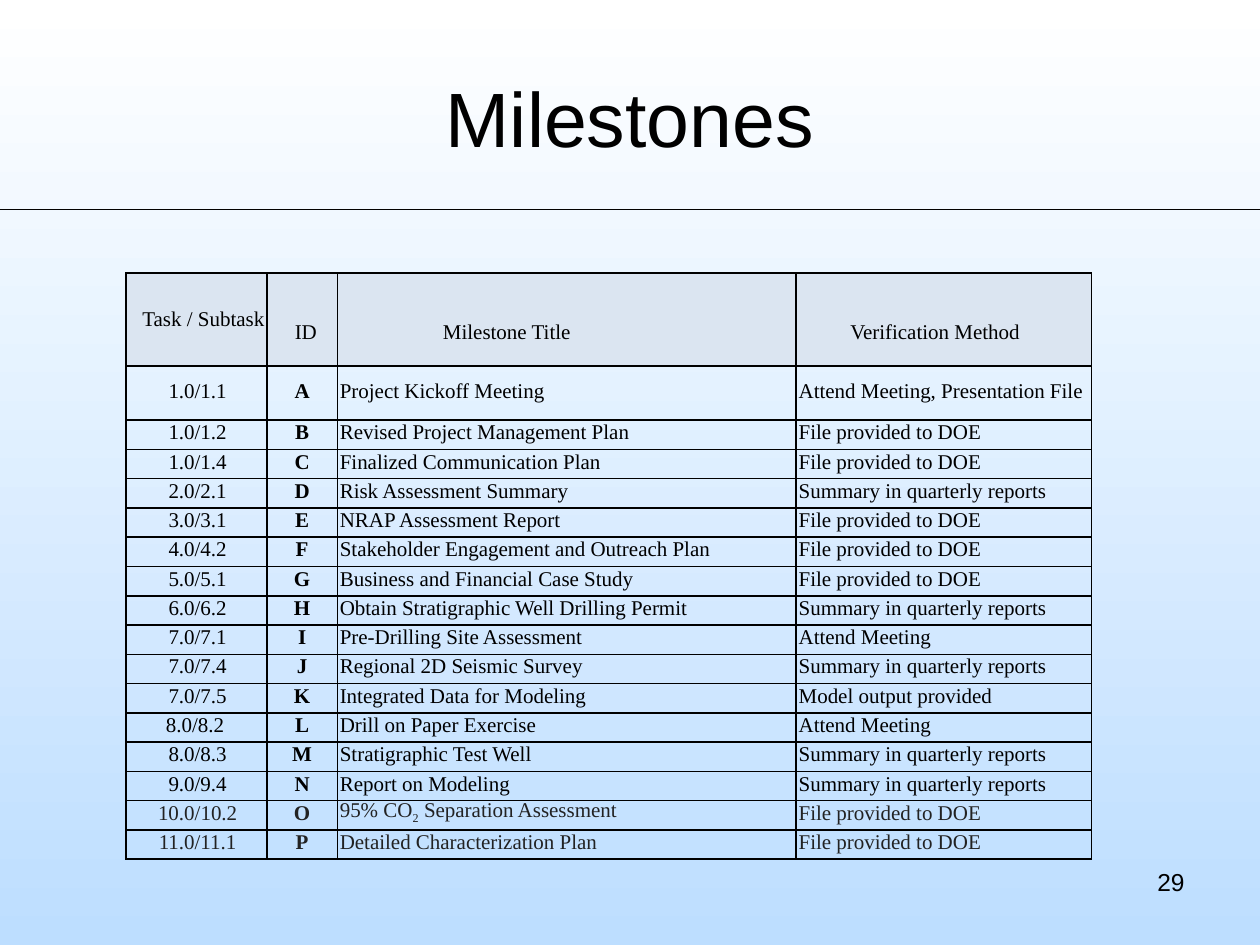
from dataclasses import dataclass

import pptx
import pptx.dml.color
import pptx.enum.shapes
import pptx.enum.text
import pptx.oxml
import pptx.oxml.ns
import pptx.util

Cm = pptx.util.Cm
Pt = pptx.util.Pt
Align = pptx.enum.text.PP_ALIGN
Anchor = pptx.enum.text.MSO_ANCHOR


@dataclass(frozen=True)
class Theme:
    sans: str = "Arial"
    serif: str = "Times New Roman"
    title_size: int = 44
    number_size: int = 14
    table_size: int = 12
    ink: str = "000000"
    soft_ink: str = "222222"
    header_fill: str = "DBE5F1"
    sky_top: str = "FFFFFF"
    sky_bottom: str = "BDDEFF"


def rgb(value):
    return pptx.dml.color.RGBColor.from_string(value)


class SlideBuilder:
    def __init__(self, deck, theme):
        self.theme = theme
        self.page = deck.slides.add_slide(deck.slide_layouts[5])

    def background(self):
        fill = self.page.background.fill
        fill.gradient()
        fill.gradient_angle = 270
        for stop, color in zip(fill.gradient_stops, (self.theme.sky_top, self.theme.sky_bottom)):
            stop.color.rgb = rgb(color)

    def span(self, para, text, font, size, color, bold=False):
        span = para.add_run()
        span.text = text
        span.font.name = font
        span.font.size = Pt(size)
        span.font.bold = bold
        span.font.color.rgb = rgb(color)
        return span

    def title(self, text, left, top, width, height):
        box = self.page.shapes.title
        box.left, box.top, box.width, box.height = Cm(left), Cm(top), Cm(width), Cm(height)
        box.text_frame.vertical_anchor = Anchor.MIDDLE
        para = box.text_frame.paragraphs[0]
        para.alignment = Align.CENTER
        self.span(para, text, self.theme.sans, self.theme.title_size, self.theme.ink)

    def text(self, text, left, top, width, height):
        box = self.page.shapes.add_textbox(Cm(left), Cm(top), Cm(width), Cm(height))
        box.text_frame.word_wrap = True
        para = box.text_frame.paragraphs[0]
        para.alignment = Align.RIGHT
        self.span(para, text, self.theme.sans, self.theme.number_size, self.theme.ink)

    def rule(self, left, top, width):
        line = self.page.shapes.add_connector(
            pptx.enum.shapes.MSO_CONNECTOR.STRAIGHT, Cm(left), Cm(top), Cm(left + width), Cm(top))
        line.line.color.rgb = rgb(self.theme.ink)
        line.line.width = Pt(0.75)
        properties = line._element.spPr
        properties.append(properties.makeelement(pptx.oxml.ns.qn("a:effectLst"), {}))

    def table(self, rows, left, top, widths, heights):
        frame = self.page.shapes.add_table(
            len(rows), len(widths), Cm(left), Cm(top), Cm(sum(widths)), Cm(sum(heights)))
        table = frame.table
        table.first_row = False
        table.horz_banding = False
        for column, width in zip(table.columns, widths):
            column.width = Cm(width)
        for row, height in zip(table.rows, heights):
            row.height = Cm(height)
        return table

    def cell(self, cell, spans, color, left=0.0, top=0.0, align=Align.LEFT,
             bold=False, spacing=Pt(11), fill=None):
        cell.vertical_anchor = Anchor.MIDDLE
        cell.margin_left, cell.margin_top = Cm(left), Cm(top)
        cell.margin_right = cell.margin_bottom = 0
        para = cell.text_frame.paragraphs[0]
        para.alignment = align
        para.line_spacing = spacing
        for text, baseline in spans:
            span = self.span(para, text, self.theme.serif, self.theme.table_size, color, bold)
            if baseline:
                span.font._element.set("baseline", str(baseline))
        self.borders(cell)
        if fill:
            cell.fill.solid()
            cell.fill.fore_color.rgb = rgb(fill)
        else:
            cell.fill.background()

    def borders(self, cell):
        properties = cell._tc.get_or_add_tcPr()
        for side in ("lnL", "lnR", "lnT", "lnB"):
            properties.append(pptx.oxml.parse_xml(
                f'<a:{side} {pptx.oxml.ns.nsdecls("a")} w="{Pt(1)}"><a:solidFill>'
                f'<a:srgbClr val="{self.theme.ink}"/></a:solidFill></a:{side}>'))


FILE = "File provided to DOE"
SUMMARY = "Summary in quarterly reports"
MEETING = "Attend Meeting"

HEADER = [
    ("Task / Subtask", dict(left=0.33, spacing=1.02)),
    ("ID", dict(left=0.15, top=0.5, align=Align.CENTER, spacing=1.07)),
    ("Milestone Title", dict(left=2.13, top=0.5, spacing=1.07)),
    ("Verification Method", dict(left=1.09, top=0.5, spacing=1.07)),
]
COLUMN_STYLES = [
    dict(left=0.05, align=Align.CENTER),
    dict(align=Align.CENTER, bold=True),
    dict(left=0.05),
    dict(left=0.05),
]
MILESTONES = [
    ("1.0/1.1", "A", "Project Kickoff Meeting", "Attend Meeting, Presentation File"),
    ("1.0/1.2", "B", "Revised Project Management Plan", FILE),
    ("1.0/1.4", "C", "Finalized Communication Plan", FILE),
    ("2.0/2.1", "D", "Risk Assessment Summary", SUMMARY),
    ("3.0/3.1", "E", "NRAP Assessment Report", FILE),
    ("4.0/4.2", "F", "Stakeholder Engagement and Outreach Plan", FILE),
    ("5.0/5.1", "G", "Business and Financial Case Study", FILE),
    ("6.0/6.2", "H", "Obtain Stratigraphic Well Drilling Permit", SUMMARY),
    ("7.0/7.1", "I", "Pre-Drilling Site Assessment", MEETING),
    ("7.0/7.4", "J", "Regional 2D Seismic Survey", SUMMARY),
    ("7.0/7.5", "K", "Integrated Data for Modeling", "Model output provided"),
    ("8.0/8.2 ", "L", "Drill on Paper Exercise", MEETING),
    ("8.0/8.3", "M", "Stratigraphic Test Well", SUMMARY),
    ("9.0/9.4", "N", "Report on Modeling", SUMMARY),
    ("10.0/10.2", "O", [("95% CO", 0), ("2", -25000), (" Separation Assessment", 0)], FILE),
    ("11.0/11.1", "P", "Detailed Characterization Plan", FILE),
]
SOFT_IDS = ("O", "P")


def main():
    deck = pptx.Presentation()
    deck.slide_width, deck.slide_height = Cm(25.4), Cm(19.05)
    theme = Theme()
    slide = SlideBuilder(deck, theme)
    slide.background()
    slide.title("Milestones", 1.27, 0.76, 22.86, 3.18)
    slide.text("29", 18.21, 17.35, 5.92, 1.32)
    slide.rule(0, 4.23, 25.4)

    heights = [1.88, 1.09] + [0.59] * (len(MILESTONES) - 1)
    table = slide.table([HEADER, *MILESTONES], 2.54, 5.5, [2.84, 1.42, 9.25, 5.95], heights)
    for column, (text, style) in enumerate(HEADER):
        slide.cell(table.cell(0, column), [(text, 0)], theme.ink, fill=theme.header_fill, **style)
    for row, milestone in enumerate(MILESTONES, start=1):
        color = theme.soft_ink if milestone[1] in SOFT_IDS else theme.ink
        for column, (content, style) in enumerate(zip(milestone, COLUMN_STYLES)):
            spans = [(content, 0)] if isinstance(content, str) else content
            slide.cell(table.cell(row, column), spans, color, **style)

    deck.save("out.pptx")


if __name__ == "__main__":
    main()
